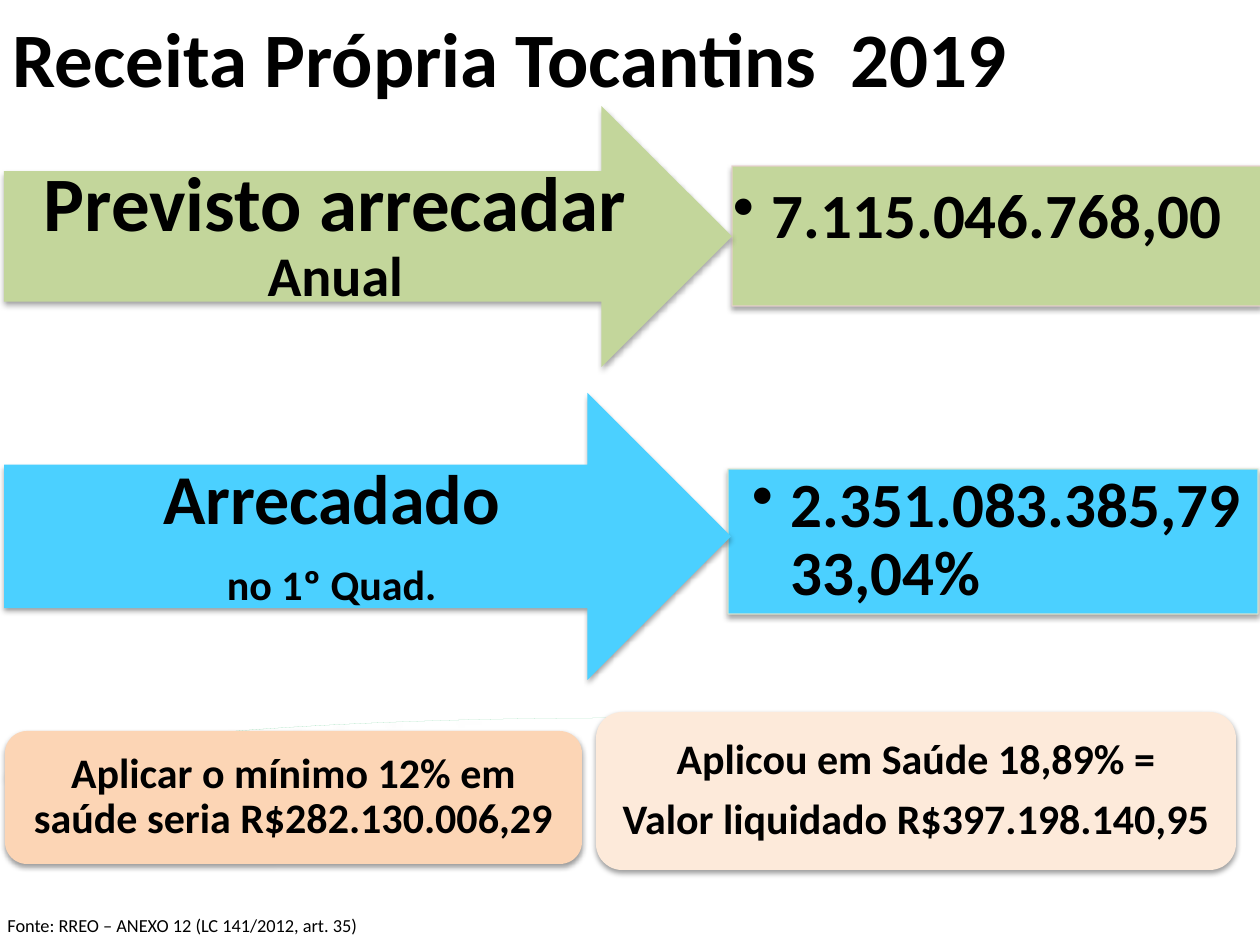
from lxml import etree
from pptx import Presentation
from pptx import util as u
from pptx.dml.color import RGBColor
from pptx.enum import shapes, text
from pptx.oxml import ns

PX = 914400 / 126
KIND = shapes.MSO_SHAPE
ALIGN = text.PP_ALIGN
ANCHOR = text.MSO_ANCHOR


def px(n):
    return u.Emu(round(n * PX))


def rgb(hex_value):
    return RGBColor.from_string(hex_value)


def add_xml(parent, tag, **attrs):
    return etree.SubElement(parent, ns.qn(tag), {k: str(v) for k, v in attrs.items()})


def add_shadow(sp, distance, alpha):
    effects = add_xml(sp._element.spPr, "a:effectLst")
    shadow = add_xml(effects, "a:outerShdw", blurRad=40000, dist=distance,
                     dir=5400000, rotWithShape=0)
    color = add_xml(shadow, "a:srgbClr", val="000000")
    add_xml(color, "a:alpha", val=alpha * 1000)


def add_panel(s, kind, box, fill, line=None, shadow=(23000, 35)):
    sp = s.shapes.add_shape(kind, *map(px, box))
    sp.fill.solid()
    sp.fill.fore_color.rgb = rgb(fill)
    if line:
        sp.line.color.rgb = rgb(line)
        sp.line.width = u.Pt(0.75)
        color = sp.line._ln.find(".//" + ns.qn("a:srgbClr"))
        add_xml(color, "a:alpha", val=90000)
    else:
        sp.line.fill.background()
    add_shadow(sp, *shadow)
    return sp


def set_margins(tf, left, top, right, bottom):
    tf.margin_left, tf.margin_top = px(left), px(top)
    tf.margin_right, tf.margin_bottom = px(right), px(bottom)


def style_run(r, size, bold=True):
    r.font.name = "Calibri"
    r.font.size = u.Pt(size)
    r.font.bold = bold
    r.font.color.rgb = rgb("000000")


def write(tf, paragraphs, align, after):
    """Each paragraph is a list of (words, size) runs."""
    tf.word_wrap = True
    for i, runs in enumerate(paragraphs):
        p = tf.add_paragraph() if i else tf.paragraphs[0]
        p.alignment = align
        p.line_spacing = 0.9
        p.space_after = u.Pt(round(runs[0][1] * after))
        for words, size in runs:
            r = p.add_run()
            r.text = words
            style_run(r, size)


def add_label(s, box, words, size, bold):
    tf = s.shapes.add_textbox(*map(px, box)).text_frame
    tf.word_wrap = True
    tf.text = words
    style_run(tf.paragraphs[0].runs[0], size, bold)


def add_value(s, box, fill, line, words, margins):
    sp = add_panel(s, KIND.FLOWCHART_PROCESS, box, fill, line)
    tf = sp.text_frame
    tf.vertical_anchor = ANCHOR.TOP
    set_margins(tf, *margins)
    p = tf.paragraphs[0]
    p.text = words
    p.alignment = ALIGN.LEFT
    p.line_spacing = 0.9
    pPr = p._p.get_or_add_pPr()
    pPr.set("marL", str(px(39)))
    pPr.set("indent", str(px(-39)))
    add_xml(pPr, "a:buChar", char="•")
    for r in p.runs:
        style_run(r, 36)


def add_arrow(s, box, fill, paragraphs, margins):
    sp = add_panel(s, KIND.RIGHT_ARROW, box, fill)
    sp.text_frame.vertical_anchor = ANCHOR.MIDDLE
    set_margins(sp.text_frame, *margins)
    write(sp.text_frame, paragraphs, ALIGN.CENTER, 0.35)


def add_health(s, box):
    """Curved arrow behind two rounded cards."""
    left, top, width, height = box
    soft = (20000, 38)
    arc = add_panel(s, KIND.CURVED_DOWN_ARROW, (left, top + 6, width, 60),
                    "76FCAF", shadow=soft)
    arc.adjustments[0], arc.adjustments[1] = 0.01, 0.2
    cards = [
        ((left, top + 19, 577, 133), "FCD5B5",
         ["Aplicar o mínimo 12% em saúde seria R$282.130.006,29"]),
        ((left + 591, top, 640, height), "FDEADA",
         ["Aplicou em Saúde 18,89% =", "Valor liquidado R$397.198.140,95"]),
    ]
    for card, fill, lines in cards:
        sp = add_panel(s, KIND.ROUNDED_RECTANGLE, card, fill, shadow=soft)
        sp.text_frame.vertical_anchor = ANCHOR.MIDDLE
        set_margins(sp.text_frame, 12, 12, 12, 12)
        write(sp.text_frame, [[(line, 24)] for line in lines], ALIGN.CENTER, 0.35)


def main():
    prs = Presentation()
    prs.slide_width, prs.slide_height = px(1260), px(945)
    s = prs.slides.add_slide(prs.slide_layouts[6])

    # Planned revenue
    green, blue = "C3D69B", "4BD0FF"
    add_value(s, (732, 166, 529, 140), green, "E8D0D0",
              "7.115.046.768,00", (1, 18, 1, 1))
    add_arrow(s, (4, 106, 728, 261), green,
              [[("Previsto arrecadar ", 44), ("Anual", 32)]], (23, 11, 23, 11))

    # Collected revenue
    add_value(s, (728, 469, 530, 145), blue, "DEE7D1",
              "2.351.083.385,79\v33,04%", (24, 4, 4, 4))
    add_arrow(s, (4, 393, 727, 287), blue,
              [[("Arrecadado", 40)], [("no 1º Quad.", 24)]], (21, 10, 21, 10))

    # Title, health spending and source
    add_label(s, (0, 4, 1260, 106), "Receita Própria Tocantins  2019", 44, True)
    add_health(s, (5, 712, 1230, 158))
    add_label(s, (-5, 908, 576, 37),
              "Fonte: RREO – ANEXO 12 (LC 141/2012, art. 35)", 10.5, False)

    prs.save("out.pptx")


if __name__ == "__main__":
    main()
